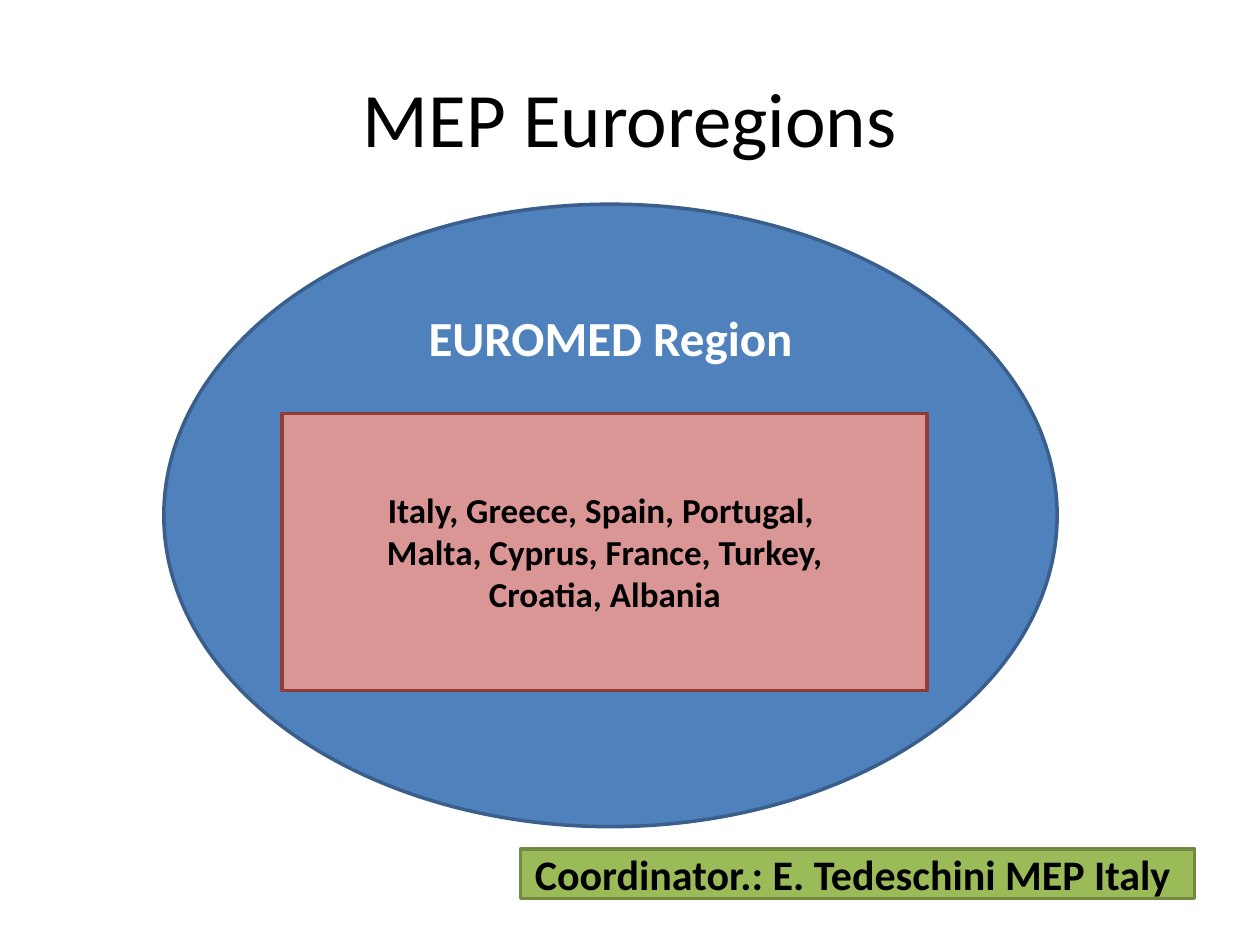
from dataclasses import dataclass

from pptx import Presentation
from pptx.dml.color import RGBColor
from pptx.enum.shapes import MSO_SHAPE
from pptx.enum.text import MSO_ANCHOR, PP_ALIGN
from pptx.util import Pt

OVAL = MSO_SHAPE.OVAL
RECT = MSO_SHAPE.RECTANGLE
MIDDLE = MSO_ANCHOR.MIDDLE
CENTER = PP_ALIGN.CENTER


@dataclass(frozen=True)
class Theme:
    font: str = "Calibri"
    black: str = "000000"
    white: str = "FFFFFF"
    blue: tuple = ("4F81BD", "3A5F8C")
    rose: tuple = ("D99694", "8E3B39")
    green: tuple = ("9BBB59", "738A42")
    line: int = 2
    title: int = 44
    region: int = 28
    note: int = 24
    list: int = 20


THEME = Theme()


def set_text(shape, text, size, color, bold=True):
    frame = shape.text_frame
    frame.word_wrap = True
    frame.vertical_anchor = MIDDLE
    frame.text = text
    for para in frame.paragraphs:
        para.alignment = CENTER
        for run in para.runs:
            font = run.font
            font.name = THEME.font
            font.size = Pt(size)
            font.bold = bold
            font.color.rgb = RGBColor.from_string(color)


def add_title(slide, box, text):
    title = slide.shapes.add_textbox(*map(Pt, box))
    set_text(title, text, THEME.title, THEME.black, bold=False)


def add_panel(slide, kind, box, colors, text, size, ink):
    panel = slide.shapes.add_shape(kind, *map(Pt, box))
    fill, edge = map(RGBColor.from_string, colors)
    panel.shadow.inherit = False
    panel.fill.solid()
    panel.fill.fore_color.rgb = fill
    panel.line.color.rgb = edge
    panel.line.width = Pt(THEME.line)
    set_text(panel, text, size, ink)
    return panel


def main():
    deck = Presentation()
    deck.slide_width, deck.slide_height = Pt(720), Pt(540)
    slide = deck.slides.add_slide(deck.slide_layouts[6])

    add_title(slide, (36, 21.6, 648, 90), "MEP Euroregions")
    region = add_panel(slide, OVAL, (93.6, 116.7, 510.5, 355.7), THEME.blue,
                       "EUROMED Region", THEME.region, THEME.white)
    region.text_frame.margin_bottom = Pt(208)
    add_panel(slide, RECT, (161.3, 236.2, 368.6, 158.4), THEME.rose,
              "Italy, Greece, Spain, Portugal, \n"
              "Malta, Cyprus, France, Turkey,\n"
              "Croatia, Albania", THEME.list, THEME.black)
    add_panel(slide, RECT, (297.4, 485.3, 385.2, 28.1), THEME.green,
              "Coordinator.: E. Tedeschini MEP Italy ",
              THEME.note, THEME.black)
    deck.save("out.pptx")


if __name__ == "__main__":
    main()
